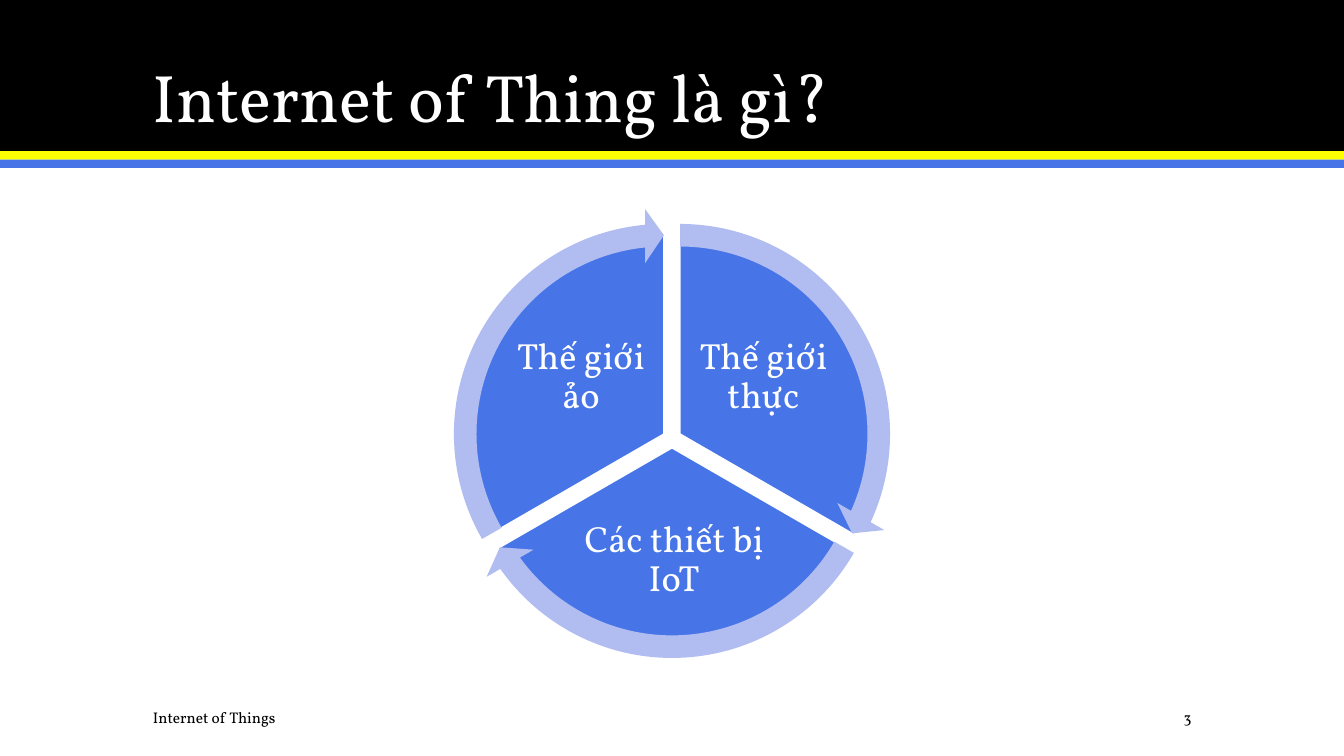
from math import cos, radians, sin

from pptx import Presentation
from pptx.dml.color import RGBColor
from pptx.enum.shapes import MSO_SHAPE
from pptx.enum.text import MSO_ANCHOR, PP_ALIGN
from pptx.util import Pt

TITLE = "Internet of Thing là gì?"
FOOTER = "Internet of Things"
NUMBER = "3"
FONT = "Vollkorn"
COLORS = {"black": "000000", "yellow": "FFFF00", "blue": "4775E7",
          "pale": "B1BDF1", "white": "FFFFFF"}
WIDTH, HEIGHT = 960, 540

# top, height, color
BANDS = [(0, 108, "black"), (108, 6, "yellow"), (114, 6, "blue")]

# start angle, label, label box (left, top, width, height)
SECTORS = [
    (270, "Thế giới thực", (493.9, 226.8, 103, 85.7)),
    (30, "Các thiết bị IoT", (404.6, 362.9, 154.1, 74.9)),
    (150, "Thế giới ảo", (363.6, 226.8, 103, 85.7)),
]
HUB = (480, 313.3)
GAP = 6.65          # how far each sector is pushed out from the hub
PIE, RING = 287.3, 322.6
SWEEP = 120
ANGLE = 0.6         # adjustment units per degree


def add_shape(kind, box, color, edge=None):
    shape = slide.shapes.add_shape(kind, *map(Pt, box))
    shape.shadow.inherit = False
    shape.fill.solid()
    shape.fill.fore_color.rgb = RGBColor.from_string(COLORS[color])
    if edge:
        shape.line.color.rgb = RGBColor.from_string(COLORS[edge])
        shape.line.width = Pt(1)
    else:
        shape.line.fill.background()
    return shape


def add_text(text, box, size, color, align=PP_ALIGN.LEFT,
             anchor=MSO_ANCHOR.MIDDLE, inset=(7.2, 3.6), spacing=1.0):
    frame = slide.shapes.add_textbox(*map(Pt, box)).text_frame
    frame.word_wrap = True
    frame.vertical_anchor = anchor
    frame.margin_left = frame.margin_right = Pt(inset[0])
    frame.margin_top = frame.margin_bottom = Pt(inset[1])
    para = frame.paragraphs[0]
    para.text = text
    para.alignment = align
    para.line_spacing = spacing
    para.font.name = FONT
    para.font.size = Pt(size)
    para.font.color.rgb = RGBColor.from_string(COLORS[color])


def sector_box(start, size):
    """Square around the hub, shifted along the middle of the sector."""
    mid = radians(start + SWEEP / 2)
    return (HUB[0] + GAP * cos(mid) - size / 2,
            HUB[1] + GAP * sin(mid) - size / 2, size, size)


def adjust(shape, values):
    for i, value in enumerate(values):
        shape.adjustments[i] = value


prs = Presentation()
prs.slide_width, prs.slide_height = Pt(WIDTH), Pt(HEIGHT)
slide = prs.slides.add_slide(prs.slide_layouts[6])

for top, height, color in BANDS:
    add_shape(MSO_SHAPE.RECTANGLE, (0, top, WIDTH, height), color)
add_text(TITLE, (102.2, 20.2, 756, 81.4), 48, "white",
         anchor=MSO_ANCHOR.BOTTOM, spacing=0.9)

for start, label, box in SECTORS:
    pie = add_shape(MSO_SHAPE.PIE, sector_box(start, PIE), "blue", "white")
    adjust(pie, (start * ANGLE, (start + SWEEP) % 360 * ANGLE))
    add_text(label, box, 26, "white", PP_ALIGN.CENTER,
             inset=(2.9, 2.9), spacing=0.9)

for start, _, _ in SECTORS:
    arrow = add_shape(MSO_SHAPE.CIRCULAR_ARROW, sector_box(start, RING), "pale")
    tip = (start + SWEEP - 5.46) % 360
    adjust(arrow, (0.05, 5.46 * ANGLE, tip * ANGLE, start * ANGLE, 0.06))

add_text(NUMBER, (750.2, 501.8, 108, 21.6), 11, "black", PP_ALIGN.RIGHT)
add_text(FOOTER, (102.2, 501.8, 491.8, 21.6), 11, "black")

prs.save("out.pptx")
